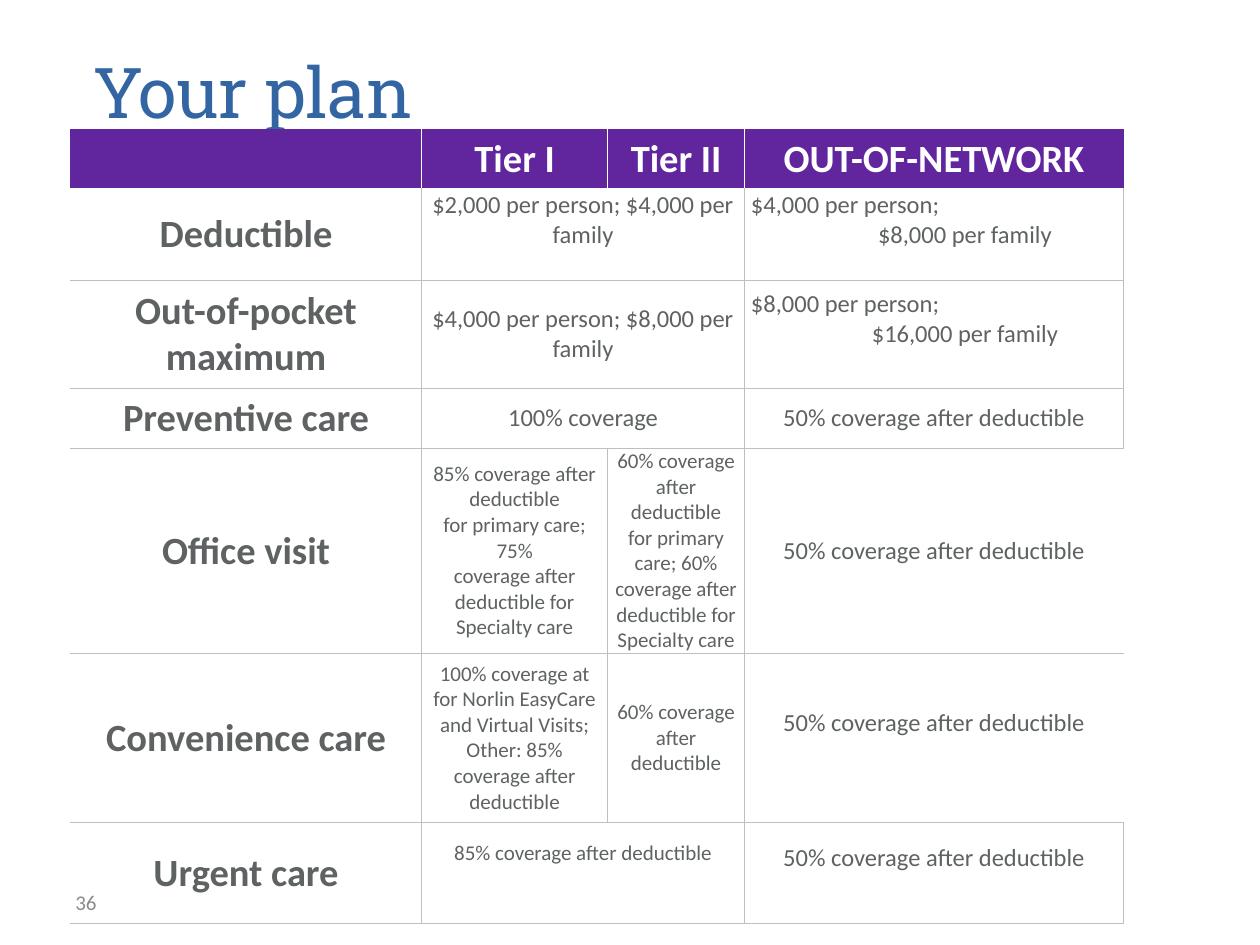
"""Build the slide that compares health plan coverage by network tier."""
from lxml.etree import SubElement
from pptx import Presentation
from pptx.dml.color import RGBColor
from pptx.enum.text import MSO_ANCHOR as Anchor, PP_ALIGN as Align
from pptx.oxml.ns import qn
from pptx.util import Cm, Pt

BLUE = RGBColor(0x33, 0x65, 0xA2)
PURPLE = RGBColor(0x61, 0x25, 0x9E)
WHITE = RGBColor(0xFF, 0xFF, 0xFF)
TEXT_GRAY = RGBColor(0x5E, 0x62, 0x63)
LINE_GRAY = RGBColor(0xBF, 0xBF, 0xBF)
NUMBER_GRAY = RGBColor(0x8C, 0x8C, 0x8C)

PLAIN_STYLE = "{2D5ABB26-0587-4C30-8999-92F81FD0307C}"
COLUMN_WIDTHS = (7.08, 3.75, 2.76, 7.64)
ROW_HEIGHTS = (1.21, 1.84, 2.18, 1.21, 4.13, 3.41, 2.04)
HEADERS = ("", "Tier I", "Tier II", "OUT-OF-NETWORK")
LABELS = ("Deductible", "Out-of-pocket maximum", "Preventive care",
          "Office visit", "Convenience care", "Urgent care")
HALF = "50% coverage after deductible"
LINE = 0.6
TIGHT = {"side": 0.13, "edge": 0}
ROOMY = {"side": 0.15, "edge": 0.13}


def visit_text(primary, specialty):
    """Return the office visit lines for two coverage rates."""
    return (f"{primary} coverage after deductible\nfor primary care; {specialty}\n"
            "coverage after deductible for\nSpecialty care")


BENEFITS = (
    (1, 1, "$2,000 per person; $4,000 per family", 14, {**TIGHT, "lift": LINE}),
    (2, 1, "$4,000 per person; $8,000 per family", 14, TIGHT),
    (3, 1, "100% coverage", 14, TIGHT),
    (3, 3, HALF, 14, TIGHT),
    (4, 1, visit_text("85%", "75%"), 12, TIGHT),
    (4, 2, visit_text("60%", "60%"), 12, TIGHT),
    (4, 3, HALF, 14, TIGHT),
    (5, 1, "100% coverage at for Norlin EasyCare and Virtual Visits; "
           "Other: 85% coverage after deductible", 12, ROOMY),
    (5, 2, "60% coverage after deductible", 12, ROOMY),
    (5, 3, HALF, 14, {**ROOMY, "lift": LINE}),
    (6, 1, "85% coverage after deductible", 12, {**ROOMY, "lift": 0.8}),
    (6, 3, HALF, 14, {**ROOMY, "lift": LINE}),
)
SPLIT_LIMITS = (
    (1, "$4,000 per person;", "$8,000 per family"),
    (2, "$8,000 per person;", "$16,000 per family"),
)


def write_text(frame, text, *, size, color, font="Calibri", bold=False,
               align=Align.LEFT):
    """Fill a text frame with one formatted paragraph per line."""
    frame.word_wrap = True
    for index, line in enumerate(text.split("\n")):
        para = frame.paragraphs[0] if index == 0 else frame.add_paragraph()
        para.alignment = align
        span = para.add_run()
        span.text = line
        span.font.name = font
        span.font.size = Pt(size)
        span.font.bold = bold
        span.font.color.rgb = color


def add_text_box(page, left, top, width, height, text, anchor=Anchor.TOP, **style):
    """Add a text box placed in centimetres."""
    box = page.shapes.add_textbox(Cm(left), Cm(top), Cm(width), Cm(height))
    box.text_frame.vertical_anchor = anchor
    write_text(box.text_frame, text, **style)


def set_border(cell, side, color):
    """Draw one side of a cell as a thin solid line."""
    line = SubElement(cell._tc.get_or_add_tcPr(), qn(f"a:ln{side}"), w=str(Pt(1)))
    fill = SubElement(line, qn("a:solidFill"))
    SubElement(fill, qn("a:srgbClr"), val=str(color))


def style_cell(cell, row, column):
    """Set the borders and the fill that suit the place of a cell."""
    grid_color = WHITE if row == 0 else LINE_GRAY
    if column > 0 and not cell.is_spanned:
        set_border(cell, "L", grid_color)
    if column < len(COLUMN_WIDTHS) - 1:
        set_border(cell, "R", grid_color)
    if row > 0:
        set_border(cell, "T", WHITE if row == 1 else LINE_GRAY)
    set_border(cell, "B", grid_color)
    if row == 0:
        cell.fill.solid()
        cell.fill.fore_color.rgb = PURPLE
    else:
        cell.fill.background()


def fill_cell(cell, text, *, side, edge, lift=0, **style):
    """Write centred text in a cell, raised by extra room below."""
    cell.vertical_anchor = Anchor.MIDDLE
    cell.margin_left = cell.margin_right = Cm(side)
    cell.margin_top = Cm(edge)
    cell.margin_bottom = Cm(edge + lift)
    write_text(cell.text_frame, text, align=Align.CENTER, **style)


def fill_split_cell(cell, person, family):
    """Write a limit per person at the left and one per family further in."""
    fill_cell(cell, f"{person}\n{family}", size=14, color=TEXT_GRAY,
              lift=LINE, **TIGHT)
    first, second = cell.text_frame.paragraphs
    first.alignment = Align.LEFT
    second._p.get_or_add_pPr().set("marL", str(Cm(1.25)))


def add_plan_table(page):
    """Add the coverage table with its headers, labels and benefits."""
    frame = page.shapes.add_table(len(ROW_HEIGHTS), len(COLUMN_WIDTHS), Cm(1.42),
                                  Cm(2.6), Cm(sum(COLUMN_WIDTHS)), Cm(sum(ROW_HEIGHTS)))
    table = frame.table
    table.horz_banding = False
    table._tbl.tblPr.find(qn("a:tableStyleId")).text = PLAIN_STYLE
    for column, width in zip(table.columns, COLUMN_WIDTHS):
        column.width = Cm(width)
    for row, height in zip(table.rows, ROW_HEIGHTS):
        row.height = Cm(height)
    for row in (1, 2, 3, 6):
        table.cell(row, 1).merge(table.cell(row, 2))
    for row in range(len(ROW_HEIGHTS)):
        for column in range(len(COLUMN_WIDTHS)):
            style_cell(table.cell(row, column), row, column)
    for column, header in enumerate(HEADERS):
        if header:
            fill_cell(table.cell(0, column), header, size=22, bold=True,
                      color=WHITE, **ROOMY)
    for row, label in enumerate(LABELS, start=1):
        fill_cell(table.cell(row, 0), label, size=22, bold=True,
                  color=TEXT_GRAY, **ROOMY)
    for row, column, text, size, room in BENEFITS:
        fill_cell(table.cell(row, column), text, size=size, color=TEXT_GRAY, **room)
    for row, person, family in SPLIT_LIMITS:
        fill_split_cell(table.cell(row, 3), person, family)


def main():
    """Build and save the deck."""
    deck = Presentation()
    deck.slide_width, deck.slide_height = Cm(25.4), Cm(19.05)
    page = deck.slides.add_slide(deck.slide_layouts[6])
    add_text_box(page, 1.27, 17.68, 5.92, 1.02, "36", anchor=Anchor.MIDDLE,
                 size=12, color=NUMBER_GRAY)
    add_text_box(page, 1.63, 0.86, 16.81, 2.39, "Your plan", size=40,
                 color=BLUE, font="Roboto Slab")
    add_plan_table(page)
    deck.save("out.pptx")


if __name__ == "__main__":
    main()
